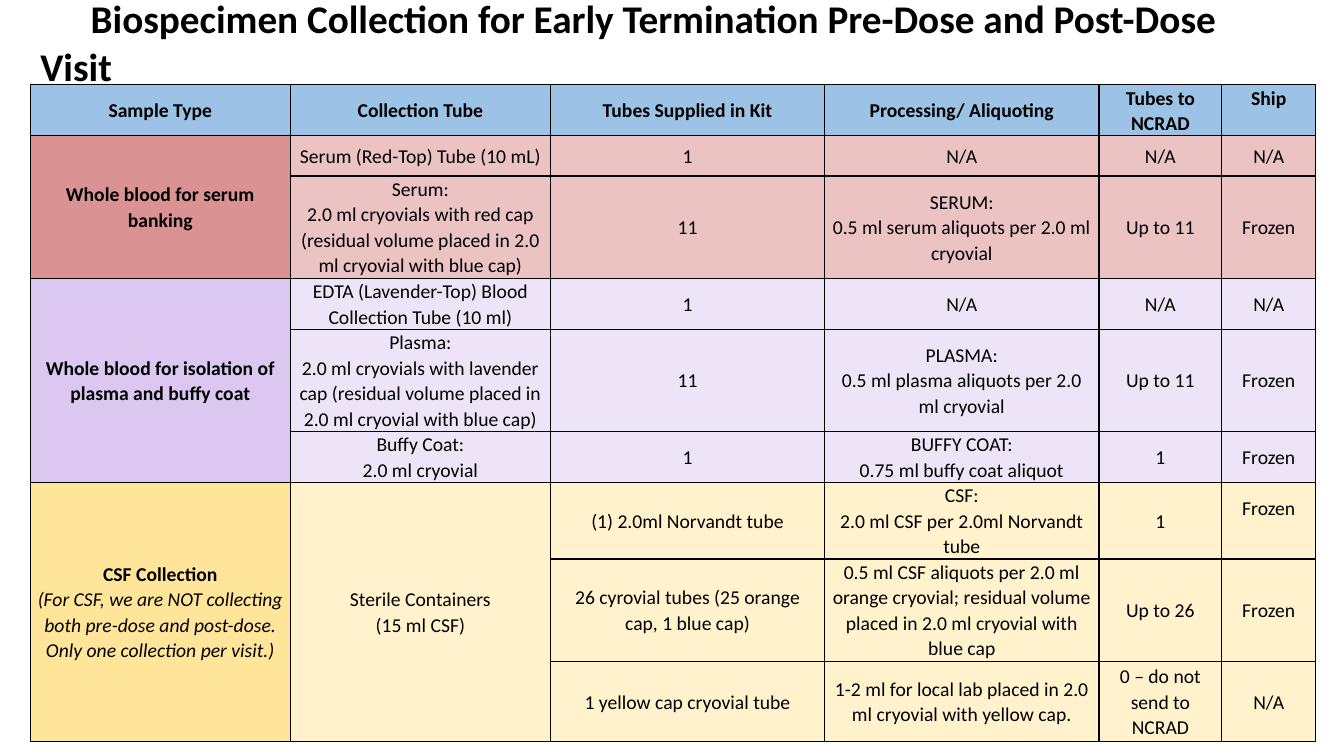
from lxml import etree
from pptx import Presentation
from pptx import util as u
from pptx.dml.color import RGBColor
from pptx.enum import text
from pptx.oxml import ns

SLIDE = (13.33, 7.5)
UNIT = 0.2
COLUMNS = (2.58, 2.58, 2.72, 2.72, 1.22, 0.93)
ROW_UNITS = (2, 2, 5, 2, 5, 2, 3, 4, 4)
COLORS = {
    "ink": "000000", "header": "9CC2E5",
    "serum": "DA9292", "serum_light": "EBC3C3",
    "plasma": "DCC7F1", "plasma_light": "EEE4F8",
    "csf": "FFE599", "csf_light": "FFF2CC",
}
ROW_GROUPS = ["header"] + ["serum"] * 2 + ["plasma"] * 3 + ["csf"] * 3
MERGES = [(1, 0, 2), (3, 0, 5), (6, 0, 8), (6, 1, 8)]
RAISED = [(0, 5), (6, 5)]
TITLE = "Biospecimen Collection for Early Termination Pre-Dose and Post-Dose Visit"
ROWS = [
    ["Sample Type", "Collection Tube", "Tubes Supplied in Kit",
     "Processing/ Aliquoting", "Tubes to NCRAD", "Ship"],
    ["Whole blood for serum banking", "Serum (Red-Top) Tube (10 mL)", "1", "N/A", "N/A", "N/A"],
    ["", "Serum:\n2.0 ml cryovials with red cap (residual volume placed in 2.0 ml cryovial with blue cap)",
     "11", "SERUM:\n0.5 ml serum aliquots per 2.0 ml cryovial", "Up to 11", "Frozen"],
    ["Whole blood for isolation of plasma and buffy coat",
     "EDTA (Lavender-Top) Blood Collection Tube (10 ml)", "1", "N/A", "N/A", "N/A"],
    ["", "Plasma:\n2.0 ml cryovials with lavender cap (residual volume placed in 2.0 ml cryovial with blue cap)",
     "11", "PLASMA:\n0.5 ml plasma aliquots per 2.0 ml cryovial", "Up to 11", "Frozen"],
    ["", "Buffy Coat:\n2.0 ml cryovial", "1", "BUFFY COAT:\n0.75 ml buffy coat aliquot", "1", "Frozen"],
    ["CSF Collection\n(For CSF, we are NOT collecting both pre-dose and post-dose. Only one collection per visit.)",
     "Sterile Containers\n(15 ml CSF)", "(1) 2.0ml Norvandt tube",
     "CSF:\n2.0 ml CSF per 2.0ml Norvandt tube", "1", "Frozen"],
    ["", "", "26 cyrovial tubes (25 orange cap, 1 blue cap)",
     "0.5 ml CSF aliquots per 2.0 ml orange cryovial; residual volume placed in 2.0 ml cryovial with blue cap",
     "Up to 26", "Frozen"],
    ["", "", "1 yellow cap cryovial tube",
     "1-2 ml for local lab placed in 2.0 ml cryovial with yellow cap.",
     "0 – do not send to NCRAD", "N/A"],
]


def apply(target, values):
    for name, value in values.items():
        setattr(target, name, value)


def style_font(font, size, bold, italic=False):
    apply(font, {"name": "Calibri", "size": u.Pt(size), "bold": bold, "italic": italic})
    font.color.rgb = RGBColor.from_string(COLORS["ink"])


def add_title(page):
    box = page.shapes.title
    apply(box, {"left": u.Inches(0.3), "top": u.Inches(0.13),
                "width": u.Inches(12.27), "height": u.Inches(0.57)})
    apply(box.text_frame, {"text": TITLE, "word_wrap": True,
                           "auto_size": text.MSO_AUTO_SIZE.NONE,
                           "vertical_anchor": text.MSO_ANCHOR.MIDDLE})
    para = box.text_frame.paragraphs[0]
    para.alignment = text.PP_ALIGN.LEFT
    apply_indent = para._p.get_or_add_pPr()
    apply_indent.set("marL", "0")
    apply_indent.set("indent", str(u.Inches(0.5)))
    style_font(para.runs[0].font, 28, True)


def add_borders(cell):
    properties = cell._tc.get_or_add_tcPr()
    for side in ("a:lnL", "a:lnR", "a:lnT", "a:lnB"):
        line = etree.SubElement(properties, ns.qn(side), w=str(u.Pt(1)))
        fill = etree.SubElement(line, ns.qn("a:solidFill"))
        etree.SubElement(fill, ns.qn("a:srgbClr"), val=COLORS["ink"])


def fill_cell(cell, words, color, heading, raised):
    add_borders(cell)
    cell.fill.solid()
    cell.fill.fore_color.rgb = RGBColor.from_string(COLORS[color])
    apply(cell, {"text": words, "vertical_anchor": text.MSO_ANCHOR.MIDDLE,
                 "margin_left": u.Inches(0.06), "margin_right": u.Inches(0.06),
                 "margin_top": 0, "margin_bottom": u.Inches(0.25 if raised else 0)})
    for index, para in enumerate(cell.text_frame.paragraphs):
        apply(para, {"alignment": text.PP_ALIGN.CENTER, "line_spacing": 1.07})
        note = heading and index > 0
        style_font(para.font, 14, heading and not note, note)
        for span in para.runs:
            style_font(span.font, 14, heading and not note, note)


def add_sample_table(page):
    frame = page.shapes.add_table(len(ROWS), len(COLUMNS), u.Inches(0.3), u.Inches(0.84),
                                  u.Inches(sum(COLUMNS)), u.Inches(6.39))
    table = frame.table
    apply(table, {"first_row": False, "horz_banding": False})
    for column, width in zip(table.columns, COLUMNS):
        column.width = u.Inches(width)
    for row, units in zip(table.rows, ROW_UNITS):
        row.height = u.Inches(units * UNIT)
    frame.height = u.Inches(6.39)
    for r, (group, words) in enumerate(zip(ROW_GROUPS, ROWS)):
        for c, word in enumerate(words):
            color = group if r == 0 or c == 0 else group + "_light"
            fill_cell(table.cell(r, c), word, color, r == 0 or c == 0, (r, c) in RAISED)
    for top, column, bottom in MERGES:
        table.cell(top, column).merge(table.cell(bottom, column))


def main():
    deck = Presentation()
    apply(deck, {"slide_width": u.Inches(SLIDE[0]), "slide_height": u.Inches(SLIDE[1])})
    page = deck.slides.add_slide(deck.slide_layouts.get_by_name("Title Only"))
    add_title(page)
    add_sample_table(page)
    deck.save("out.pptx")


if __name__ == "__main__":
    main()
